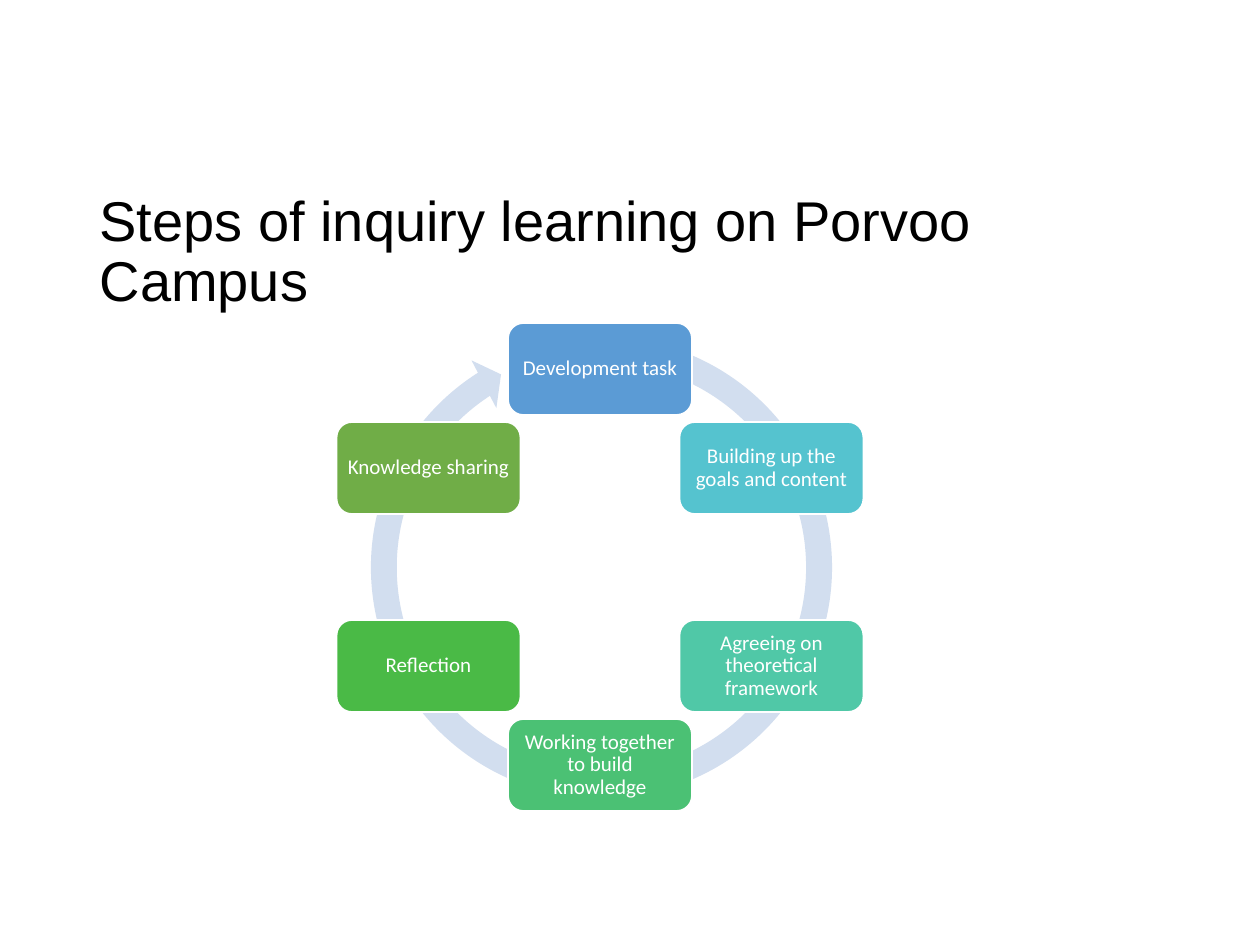
"""Build a slide showing the inquiry learning cycle as six boxes on a circular arrow."""
import math

import pptx
import pptx.dml.color
import pptx.enum.shapes
import pptx.enum.text
import pptx.util

TITLE = "Steps of inquiry learning on Porvoo Campus"
STEPS = [
    ("Development task", "blue"),
    ("Building up the goals and content", "cyan"),
    ("Agreeing on theoretical framework", "teal"),
    ("Working together to build knowledge", "mint"),
    ("Reflection", "green"),
    ("Knowledge sharing", "olive"),
]
COLORS = {
    "blue": "5B9BD5", "cyan": "55C3CF", "teal": "50C8A7",
    "mint": "4BC174", "green": "4ABA46", "olive": "70AD47",
    "ring": "D2DEEF", "white": "FFFFFF", "black": "000000",
}
ARROW_ADJUSTMENTS = [0.053, 3.126, 142.388, 171.208, 0.055]
CENTER_X, CENTER_Y, RADIUS = 600, 567, 198
BOX_W, BOX_H = 184, 92
ARROW_SIZE, ARROW_X, ARROW_Y = 489, 357, 323
INSET = 6

MSO_SHAPE = pptx.enum.shapes.MSO_SHAPE
PP_ALIGN = pptx.enum.text.PP_ALIGN


def px(n):
    return pptx.util.Emu(round(n * 914400 / 126))


def rgb(name):
    return pptx.dml.color.RGBColor.from_string(COLORS[name])


def place(sp, x, y, w, h):
    sp.left, sp.top, sp.width, sp.height = px(x), px(y), px(w), px(h)


def write(tf, text, font, size, color, align):
    tf.word_wrap = True
    tf.auto_size = pptx.enum.text.MSO_AUTO_SIZE.NONE
    tf.vertical_anchor = pptx.enum.text.MSO_ANCHOR.MIDDLE
    p = tf.paragraphs[0]
    p.text = text
    p.alignment = align
    p.line_spacing = 0.9
    p.font.name = font
    p.font.size = pptx.util.Pt(size)
    p.font.color.rgb = rgb(color)


def add_filled(slide, kind, x, y, w, h, color):
    sp = slide.shapes.add_shape(kind, px(x), px(y), px(w), px(h))
    sp.shadow.inherit = False
    sp.fill.solid()
    sp.fill.fore_color.rgb = rgb(color)
    return sp


def add_ring(slide):
    sp = add_filled(slide, MSO_SHAPE.CIRCULAR_ARROW, ARROW_X, ARROW_Y,
                    ARROW_SIZE, ARROW_SIZE, "ring")
    sp.line.fill.background()
    for i, value in enumerate(ARROW_ADJUSTMENTS):
        sp.adjustments[i] = value


def add_step(slide, i, text, color):
    angle = 2 * math.pi * i / len(STEPS)
    x = CENTER_X + RADIUS * math.sin(angle) - BOX_W / 2
    y = CENTER_Y - RADIUS * math.cos(angle) - BOX_H / 2
    sp = add_filled(slide, MSO_SHAPE.ROUNDED_RECTANGLE, x, y, BOX_W, BOX_H, color)
    sp.line.color.rgb = rgb("white")
    sp.line.width = pptx.util.Pt(1)
    tf = sp.text_frame
    tf.margin_left = tf.margin_right = tf.margin_top = tf.margin_bottom = px(INSET)
    write(tf, text, "Calibri", 12, "white", PP_ALIGN.CENTER)


def main():
    prs = pptx.Presentation()
    prs.slide_width, prs.slide_height = px(1260), px(945)
    slide = prs.slides.add_slide(prs.slide_layouts[5])
    title = slide.shapes.title
    place(title, 87, 186, 988, 135)
    write(title.text_frame, TITLE, "Arial", 32, "black", PP_ALIGN.LEFT)
    add_ring(slide)
    for i, (text, color) in enumerate(STEPS):
        add_step(slide, i, text, color)
    prs.save("out.pptx")


if __name__ == "__main__":
    main()
